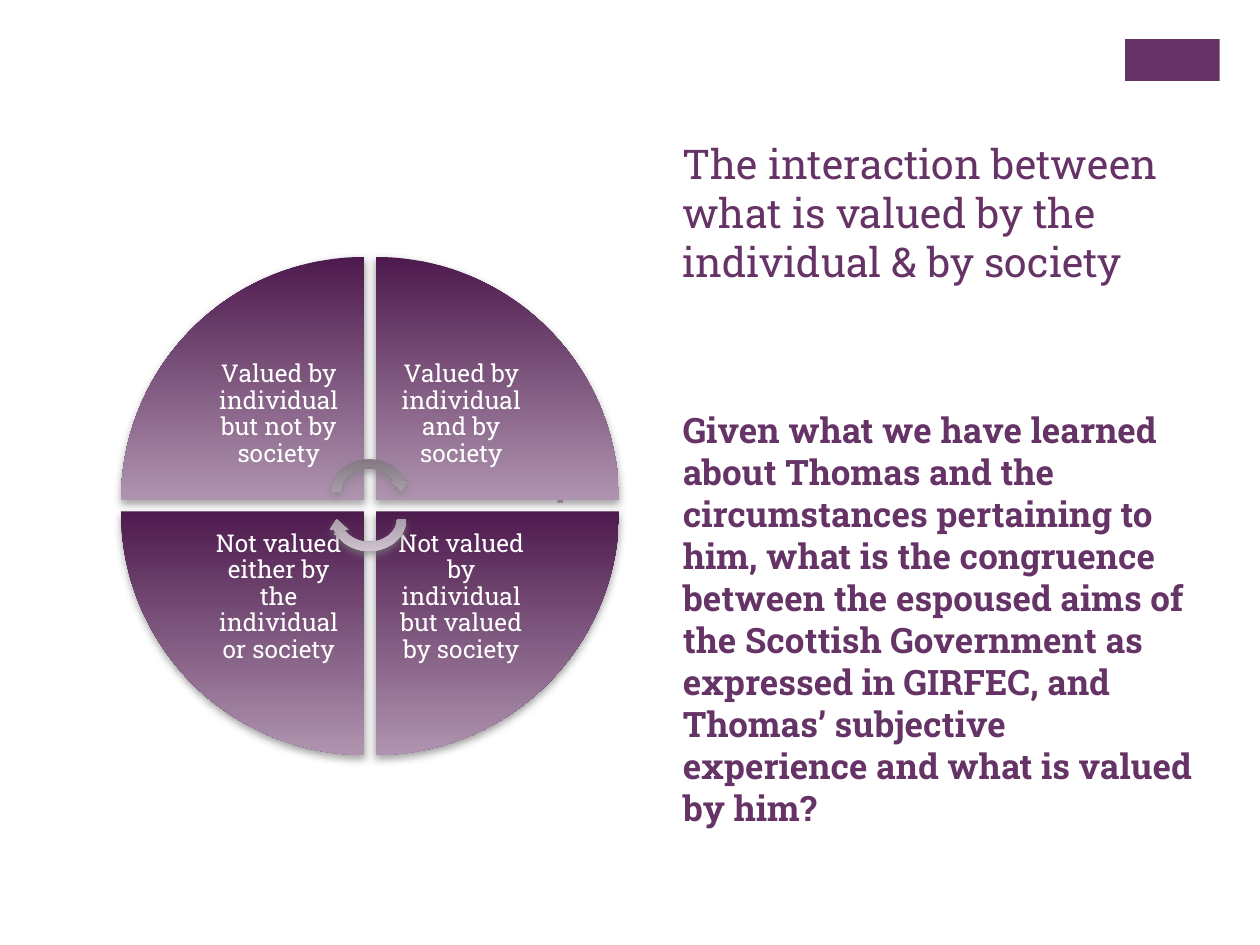
from lxml import etree
from pptx import Presentation
from pptx.dml.color import RGBColor
from pptx.enum.shapes import MSO_SHAPE as Preset
from pptx.enum.text import MSO_ANCHOR as Anchor, MSO_AUTO_SIZE as AutoSize, PP_ALIGN as Align
from pptx.oxml import parse_xml
from pptx.oxml.ns import nsdecls, qn
from pptx.util import Cm, Pt

FONT = "Roboto Slab"
PURPLE, LILAC, WHITE = "663366", "B870B8", "FFFFFF"
WEDGE_COLOURS = ("4D1A4D", "AF94AF")
ARROW_COLOURS = ("7D737D", "D4C8D4")

HEADING = "The interaction between what is valued by the individual & by society"
QUESTION = (
    "Given what we have learned about Thomas and the circumstances pertaining to him, "
    "what is the congruence between the espoused aims of the Scottish Government as "
    "expressed in GIRFEC, and Thomas’ subjective experience and what is valued by him?"
)
QUADRANTS = [
    (0, 0, 0, "Valued by individual but not by society"),
    (1, 0, 90, "Valued by individual and by society"),
    (1, 1, 180, "Not valued by individual but valued by society"),
    (0, 1, 270, "Not valued either by the individual or society"),
]
ARROWS = [(9.17, 0), (9.73, 180)]

CIRCLE_LEFT, CIRCLE_TOP = 2.44, 5.18
WEDGE, PITCH, LABEL = 4.91, 5.13, 3.46
ARROW_LEFT, ARROW_WIDTH, ARROW_HEIGHT = 6.6, 1.68, 1.47
COLUMN_LEFT, COLUMN_WIDTH = 13.51, 10.82


def colour(code):
    return RGBColor.from_string(code)


def place(shape, *box):
    shape.left, shape.top, shape.width, shape.height = map(Cm, box)


def write(shape, text, size, code, bold=False, anchor=Anchor.TOP, inset=None):
    frame = shape.text_frame
    frame.word_wrap = True
    frame.auto_size = AutoSize.NONE
    frame.vertical_anchor = anchor
    if inset is not None:
        frame.margin_left = frame.margin_right = Cm(inset)
        frame.margin_top = frame.margin_bottom = Cm(inset)
    paragraph = frame.paragraphs[0]
    run = paragraph.add_run()
    run.text = text
    run.font.name = FONT
    run.font.size = Pt(size)
    run.font.bold = bold
    run.font.color.rgb = colour(code)
    return paragraph


def add_shaded(preset, box, rotation, colours):
    shape = slide.shapes.add_shape(preset, *map(Cm, box))
    shape.rotation = rotation
    shape.line.fill.background()
    shape.fill.gradient()
    shape.fill.gradient_angle = 270
    for stop, code, position in zip(shape.fill.gradient_stops, colours, (0, 1)):
        stop.color.rgb = colour(code)
        stop.position = position
    properties = shape._element.spPr
    properties.find(qn("a:gradFill")).set("rotWithShape", "0")
    properties.append(parse_xml(
        f'<a:effectLst {nsdecls("a")}><a:outerShdw blurRad="{Pt(5)}" dist="{Pt(2)}" '
        'dir="5400000" rotWithShape="0"><a:srgbClr val="808080"><a:alpha val="75000"/>'
        '</a:srgbClr></a:outerShdw></a:effectLst>'))


deck = Presentation()
deck.slide_width, deck.slide_height = Cm(25.4), Cm(19.05)
slide = deck.slides.add_slide(deck.slide_layouts[1])

heading, question = slide.placeholders
place(heading, COLUMN_LEFT, 3.48, COLUMN_WIDTH, 2.41)
write(heading, HEADING, 23.4, PURPLE, anchor=Anchor.BOTTOM).alignment = Align.LEFT

place(question, COLUMN_LEFT, 8.1, COLUMN_WIDTH, 5.97)
paragraph = write(question, QUESTION, 20, PURPLE, bold=True)
paragraph.space_before = Pt(6)
layout = paragraph._p.get_or_add_pPr()
layout.set("marL", "0")
layout.set("indent", "0")
etree.SubElement(layout, qn("a:buNone"))

corner = slide.shapes.add_shape(Preset.RECTANGLE, Cm(22.68), Cm(0.79), Cm(1.91), Cm(0.84))
corner.shadow.inherit = False
corner.fill.solid()
corner.fill.fore_color.rgb = colour(PURPLE)
corner.line.fill.background()

plus = slide.shapes.add_textbox(Cm(11.07), Cm(9.37), Cm(0.61), Cm(1.02))
write(plus, "+", 24, LILAC, bold=True, inset=0)

for column, row, rotation, text in QUADRANTS:
    left, top = CIRCLE_LEFT + column * PITCH, CIRCLE_TOP + row * PITCH
    add_shaded(Preset.PIE_WEDGE, (left, top, WEDGE, WEDGE), rotation, WEDGE_COLOURS)
    label_left = left + (1 - column) * (WEDGE - LABEL)
    label_top = top + (1 - row) * (WEDGE - LABEL)
    label = slide.shapes.add_textbox(*map(Cm, (label_left, label_top, LABEL, LABEL)))
    paragraph = write(label, text, 14, WHITE, anchor=Anchor.MIDDLE, inset=0.28)
    paragraph.alignment = Align.CENTER
    paragraph.line_spacing = 0.9

for top, rotation in ARROWS:
    box = (ARROW_LEFT, top, ARROW_WIDTH, ARROW_HEIGHT)
    add_shaded(Preset.CIRCULAR_ARROW, box, rotation, ARROW_COLOURS)

deck.save("out.pptx")
